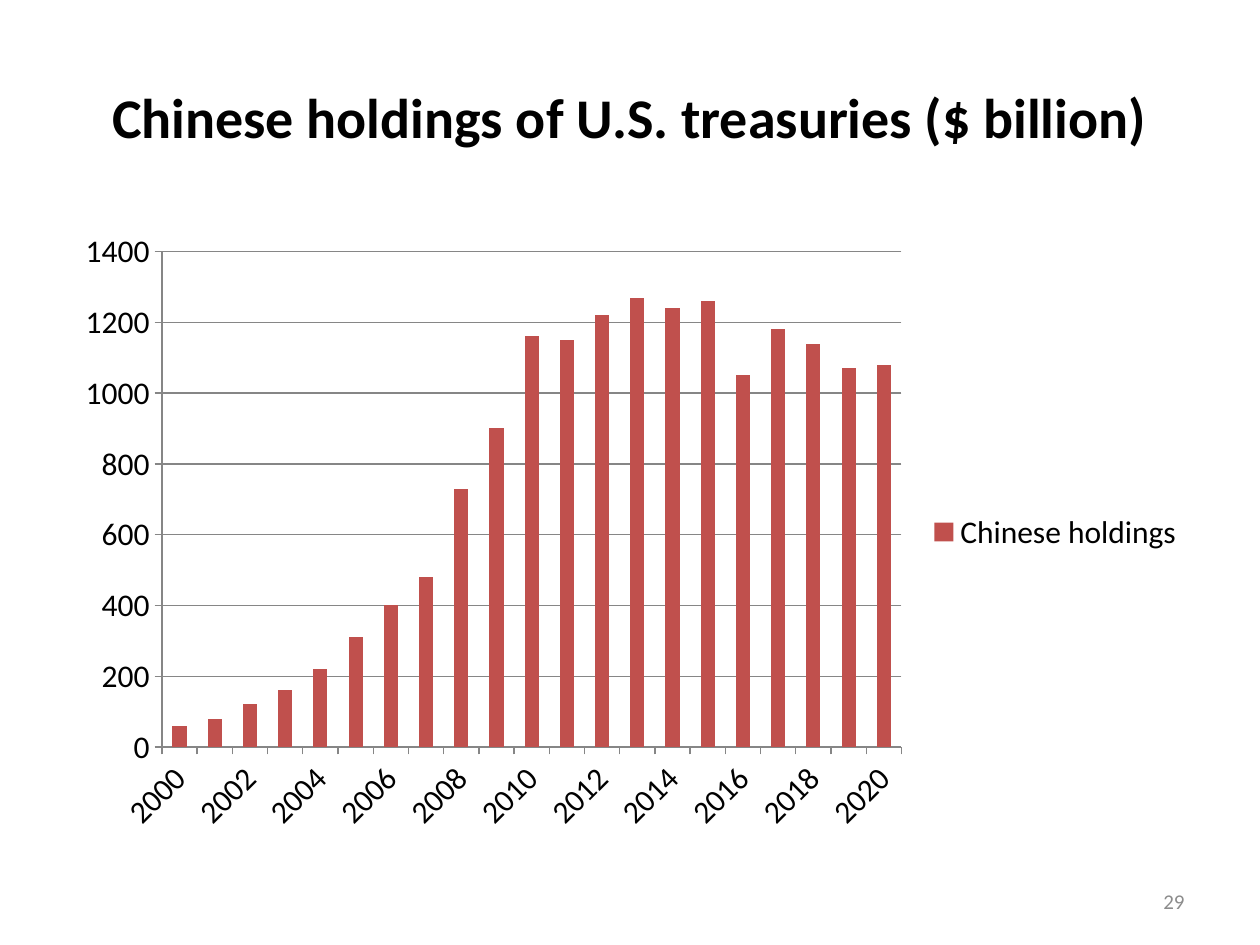
from pptx import Presentation
from pptx.chart.data import CategoryChartData
from pptx.dml.color import RGBColor
from pptx.enum.chart import XL_CHART_TYPE as ChartType, XL_LEGEND_POSITION as LegendPosition
from pptx.enum.chart import XL_TICK_MARK as TickMark
from pptx.enum.text import MSO_ANCHOR as Anchor, PP_ALIGN as Align
from pptx.util import Emu, Pt


def px(length):
    return Emu(round(length * 914400 / 126))


def style_font(font, size, color, bold=False):
    font.name = "Calibri"
    font.size = Pt(size)
    font.bold = bold
    font.color.rgb = RGBColor.from_string(color)


presentation = Presentation()
presentation.slide_width = px(1260)
presentation.slide_height = px(945)
slide = presentation.slides.add_slide(presentation.slide_layouts[6])

texts = [
    ("Chinese holdings of U.S. treasuries ($ billion)", (63, 37, 1134, 158), Align.CENTER, 32, "000000", True),
    ("29", (903, 876, 294, 50), Align.RIGHT, 12, "8C8C8C", False),
]
for text, box, alignment, size, color, bold in texts:
    text_frame = slide.shapes.add_textbox(*map(px, box)).text_frame
    text_frame.word_wrap = True
    text_frame.vertical_anchor = Anchor.MIDDLE
    text_frame.text = text
    paragraph = text_frame.paragraphs[0]
    paragraph.alignment = alignment
    style_font(paragraph.runs[0].font, size, color, bold)

holdings = [60, 80, 120, 160, 220, 310, 400, 480, 730, 900, 1160,
            1150, 1220, 1270, 1240, 1260, 1050, 1180, 1140, 1070, 1080]
chart_data = CategoryChartData()
chart_data.categories = [str(year) for year in range(2000, 2021)]
chart_data.add_series("Chinese holdings", holdings)
chart = slide.shapes.add_chart(
    ChartType.COLUMN_CLUSTERED, px(63), px(220), px(1134), px(624), chart_data
).chart
style_font(chart.font, 18, "000000")
chart.has_title = False
chart.has_legend = True
chart.legend.position = LegendPosition.RIGHT
chart.legend.include_in_layout = False

plot = chart.plots[0]
plot.gap_width = 150
plot.vary_by_categories = False
fill = plot.series[0].format.fill
fill.solid()
fill.fore_color.rgb = RGBColor.from_string("C0504D")

value_axis = chart.value_axis
value_axis.minimum_scale = 0
value_axis.maximum_scale = 1400
value_axis.major_unit = 200
value_axis.has_major_gridlines = True
for axis in (chart.category_axis, value_axis):
    axis.major_tick_mark = TickMark.OUTSIDE
    axis.minor_tick_mark = TickMark.NONE
for lined in (chart.category_axis, value_axis, value_axis.major_gridlines):
    lined.format.line.width = Pt(0.75)
    lined.format.line.color.rgb = RGBColor.from_string("868686")

presentation.save("out.pptx")
